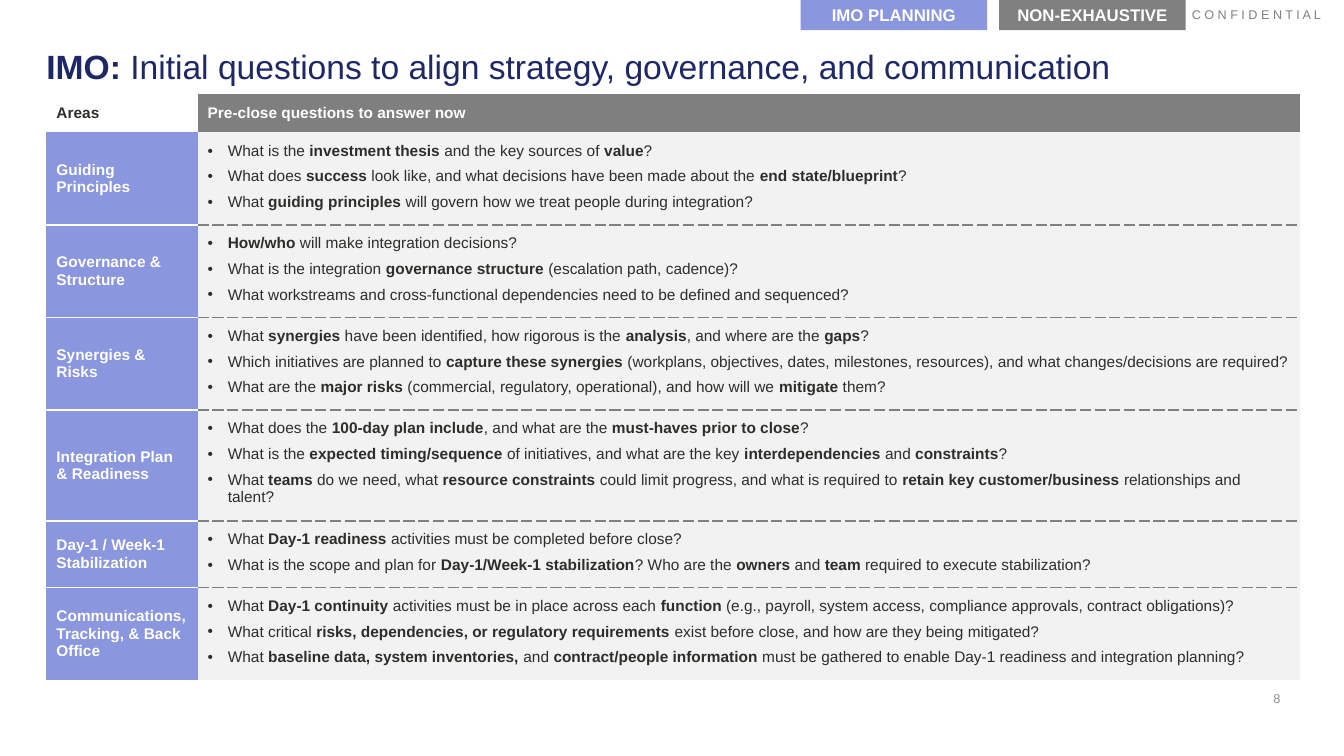
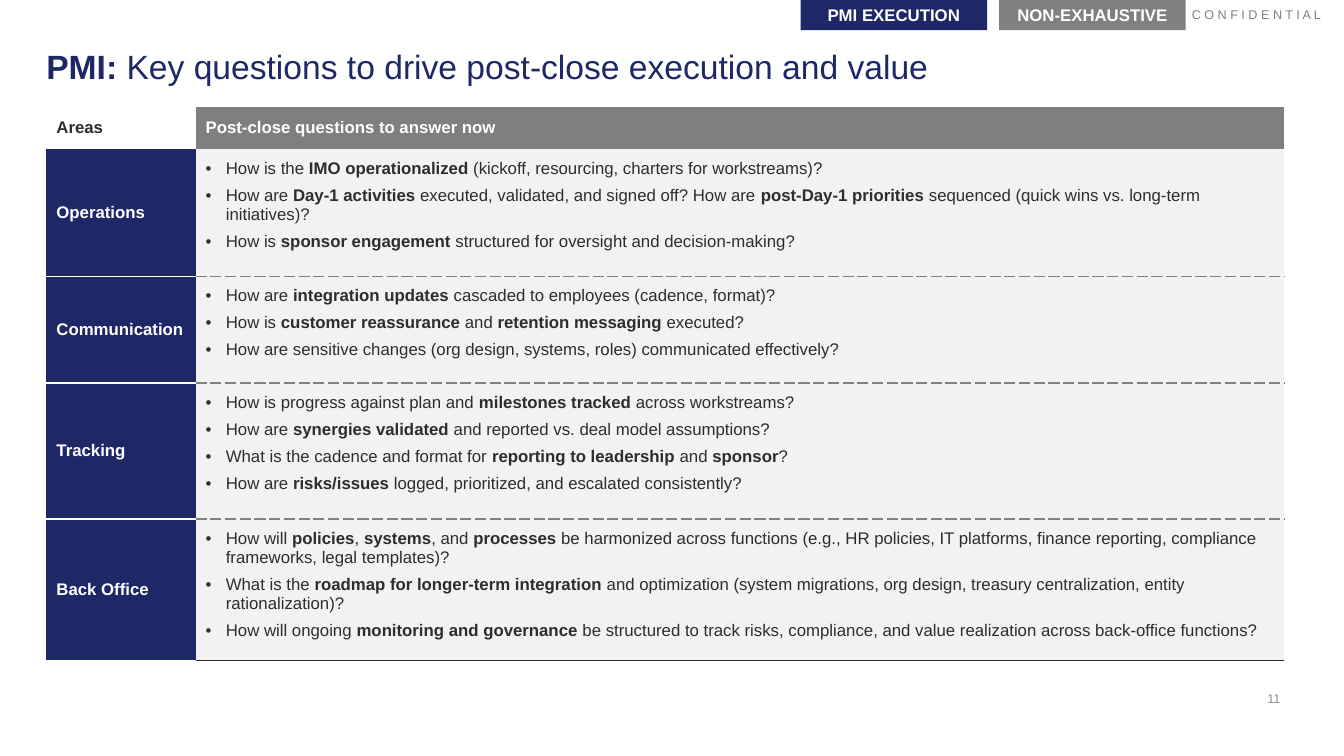
from lxml.etree import SubElement
from pptx import Presentation
from pptx.dml.color import RGBColor
from pptx.enum.shapes import MSO_SHAPE
from pptx.enum.text import MSO_ANCHOR, PP_ALIGN
from pptx.oxml import parse_xml
from pptx.oxml.ns import nsdecls, qn
from pptx.util import Inches, Pt

FONT = "Arial"
NAVY = RGBColor(0x1E, 0x28, 0x67)
LILAC = RGBColor(0x8A, 0x96, 0xDD)
GRAY = RGBColor(0x80, 0x80, 0x80)
HEAD = RGBColor(0x7F, 0x7F, 0x7F)
FOOT = RGBColor(0x8F, 0x8F, 0x8E)
PALE = RGBColor(0xF2, 0xF2, 0xF2)
INK = RGBColor(0x2D, 0x2D, 0x2A)
WHITE = RGBColor(0xFF, 0xFF, 0xFF)
PLAIN = "{2D5ABB26-0587-4C30-8999-92F81FD0307C}"
LEFT = 0.46
GAP = (WHITE, 1, "solid")
DASH = (GRAY, 1, "sysDash")
RULE = (INK, 0.5, "solid")

SLIDES = [
    {
        "tag": "IMO PLANNING",
        "tone": LILAC,
        "title": "*IMO:* Initial questions to align strategy, governance, and communication",
        "page": "8",
        "head": "Pre-close questions to answer now",
        "top": 0.93,
        "cols": (1.5, 10.93),
        "rows": (0.38, 0.88, 0.88, 0.88, 1.04, 0.66, 0.87),
        "size": 11,
        "end": None,
        "areas": [
            ("Guiding Principles", [
                "What is the *investment thesis* and the key sources of *value*?",
                "What does *success* look like, and what decisions have been made about the *end state/blueprint*?",
                "What *guiding principles* will govern how we treat people during integration?",
            ]),
            ("Governance & Structure", [
                "*How/who* will make integration decisions?",
                "What is the integration *governance structure* (escalation path, cadence)?",
                "What workstreams and cross-functional dependencies need to be defined and sequenced?",
            ]),
            ("Synergies & Risks", [
                "What *synergies* have been identified, how rigorous is the *analysis*, and where are the *gaps*?",
                "Which initiatives are planned to *capture these synergies* (workplans, objectives, dates, "
                "milestones, resources), and what changes/decisions are required?",
                "What are the *major risks* (commercial, regulatory, operational), and how will we *mitigate* them?",
            ]),
            ("Integration Plan & Readiness", [
                "What does the *100-day plan include*, and what are the *must-haves prior to close*?",
                "What is the *expected timing/sequence* of initiatives, and what are the key "
                "*interdependencies* and *constraints*?",
                "What *teams* do we need, what *resource constraints* could limit progress, and what is "
                "required to *retain key customer/business* relationships and talent?",
            ]),
            ("Day-1 / Week-1 Stabilization", [
                "What *Day-1 readiness* activities must be completed before close?",
                "What is the scope and plan for *Day-1/Week-1 stabilization*? Who are the *owners* and "
                "*team* required to execute stabilization?",
            ]),
            ("Communications, Tracking, & Back Office", [
                "What *Day-1 continuity* activities must be in place across each *function* (e.g., payroll, "
                "system access, compliance approvals, contract obligations)?",
                "What critical *risks, dependencies, or regulatory requirements* exist before close, and "
                "how are they being mitigated?",
                "What *baseline data, system inventories,* and *contract/people information* must be "
                "gathered to enable Day-1 readiness and integration planning?",
            ]),
        ],
    },
    {
        "tag": "PMI EXECUTION",
        "tone": NAVY,
        "title": "*PMI:* Key questions to drive post-close execution and value",
        "page": "11",
        "head": "Post-close questions to answer now",
        "top": 1.06,
        "cols": (1.48, 10.8),
        "rows": (0.42, 1.26, 1.06, 1.35, 1.4),
        "size": 12,
        "end": RULE,
        "areas": [
            ("Operations", [
                "How is the *IMO operationalized* (kickoff, resourcing, charters for workstreams)?",
                "How are *Day-1 activities* executed, validated, and signed off? How are *post-Day-1 "
                "priorities* sequenced (quick wins vs. long-term initiatives)?",
                "How is *sponsor engagement* structured for oversight and decision-making?",
            ]),
            ("Communication", [
                "How are *integration updates* cascaded to employees (cadence, format)?",
                "How is *customer reassurance* and *retention messaging* executed?",
                "How are sensitive changes (org design, systems, roles) communicated effectively?",
            ]),
            ("Tracking", [
                "How is progress against plan and *milestones tracked* across workstreams?",
                "How are *synergies validated* and reported vs. deal model assumptions?",
                "What is the cadence and format for *reporting to leadership* and *sponsor*?",
                "How are *risks/issues* logged, prioritized, and escalated consistently?",
            ]),
            ("Back Office", [
                "How will *policies*, *systems*, and *processes* be harmonized across functions (e.g., HR "
                "policies, IT platforms, finance reporting, compliance frameworks, legal templates)?",
                "What is the *roadmap for longer-term integration* and optimization (system migrations, "
                "org design, treasury centralization, entity rationalization)?",
                "How will ongoing *monitoring and governance* be structured to track risks, compliance, "
                "and value realization across back-office functions?",
            ]),
        ],
    },
]


def style(para, size, color, bold=None):
    font = para.font
    font.name, font.size, font.bold = FONT, Pt(size), bold
    font.color.rgb = color


def write(para, text, size, color):
    style(para, size, color)
    for i, part in enumerate(text.split("*")):
        if part:
            run = para.add_run()
            run.text = part
            run.font.bold = i % 2 == 1


def bullet(para):
    props = para._p.get_or_add_pPr()
    props.set("marL", str(Inches(0.2)))
    props.set("indent", str(-Inches(0.2)))
    SubElement(props, qn("a:buFont"), typeface=FONT)
    SubElement(props, qn("a:buChar"), char="•")
    para.space_after = Pt(6)


def edge(cell, side, line):
    if line:
        color, width, dash = line
        cell._tc.get_or_add_tcPr().insert(0, parse_xml(
            f'<a:{side} {nsdecls("a")} w="{Pt(width)}"><a:solidFill><a:srgbClr val="{color}"/>'
            f'</a:solidFill><a:prstDash val="{dash}"/></a:{side}>'))


def paint(cell, color):
    cell.fill.solid()
    cell.fill.fore_color.rgb = color


def label(cell, text, size, color):
    cell.vertical_anchor = MSO_ANCHOR.MIDDLE
    para = cell.text_frame.paragraphs[0]
    para.text = text
    style(para, size, color, True)


def box(slide, left, top, width, height, anchor, wrap):
    frame = slide.shapes.add_textbox(*map(Inches, (left, top, width, height))).text_frame
    frame.margin_left = frame.margin_right = frame.margin_top = frame.margin_bottom = 0
    frame.vertical_anchor, frame.word_wrap = anchor, wrap
    return frame.paragraphs[0]


def badge(slide, left, text, color):
    shape = slide.shapes.add_shape(
        MSO_SHAPE.RECTANGLE, Inches(left), 0, Inches(1.85), Inches(0.3))
    shape.shadow.inherit = False
    shape.fill.solid()
    shape.fill.fore_color.rgb = color
    shape.line.fill.background()
    para = shape.text_frame.paragraphs[0]
    para.text = text
    para.alignment = PP_ALIGN.CENTER
    style(para, 12, WHITE, True)


def frame(slide, data):
    note = box(slide, 11.82, 0.07, 1.45, 0.15, MSO_ANCHOR.MIDDLE, False)
    note.text = "C O N F I D E N T I A L"
    style(note, 9, GRAY)
    page = box(slide, 12.4, 6.85, 0.3, 0.15, MSO_ANCHOR.MIDDLE, True)
    page.text = data["page"]
    page.alignment = PP_ALIGN.RIGHT
    style(page, 9, FOOT)
    title = box(slide, LEFT, 0.5, 12.43, 0.36, MSO_ANCHOR.TOP, True)
    title.line_spacing = 0.9
    write(title, data["title"], 24, NAVY)
    badge(slide, 9.91, "NON-EXHAUSTIVE", GRAY)
    badge(slide, 7.94, data["tag"], data["tone"])


def grid(slide, data):
    cols, rows, size, areas = (data[key] for key in ("cols", "rows", "size", "areas"))
    table = slide.shapes.add_table(
        len(rows), len(cols), Inches(LEFT), Inches(data["top"]),
        Inches(sum(cols)), Inches(sum(rows))).table
    table.first_row = table.horz_banding = False
    table._tbl.tblPr.find(qn("a:tableStyleId")).text = PLAIN
    for col, width in zip(table.columns, cols):
        col.width = Inches(width)
    for row, height in zip(table.rows, rows):
        row.height = Inches(height)
    for cell in table.iter_cells():
        cell.margin_left = cell.margin_right = Inches(0.1)
        cell.margin_top = cell.margin_bottom = Inches(0.1)

    table.cell(0, 0).fill.background()
    label(table.cell(0, 0), "Areas", size, INK)
    paint(table.cell(0, 1), HEAD)
    label(table.cell(0, 1), data["head"], size, WHITE)

    for i, (area, asks) in enumerate(areas, 1):
        name, body = table.cell(i, 0), table.cell(i, 1)
        paint(name, data["tone"])
        label(name, area, size, WHITE)
        paint(body, PALE)
        last = i == len(areas)
        for cell, line, end in ((name, GAP, None), (body, DASH, data["end"])):
            edge(cell, "lnB", end if last else line)
            edge(cell, "lnT", line if i > 1 else None)
        for j, ask in enumerate(asks):
            para = body.text_frame.add_paragraph() if j else body.text_frame.paragraphs[0]
            bullet(para)
            write(para, ask, size, INK)


def main():
    deck = Presentation()
    deck.slide_width, deck.slide_height = Inches(13.33), Inches(7.5)
    for data in SLIDES:
        slide = deck.slides.add_slide(deck.slide_layouts[6])
        frame(slide, data)
        grid(slide, data)
    deck.save("out.pptx")


if __name__ == "__main__":
    main()
